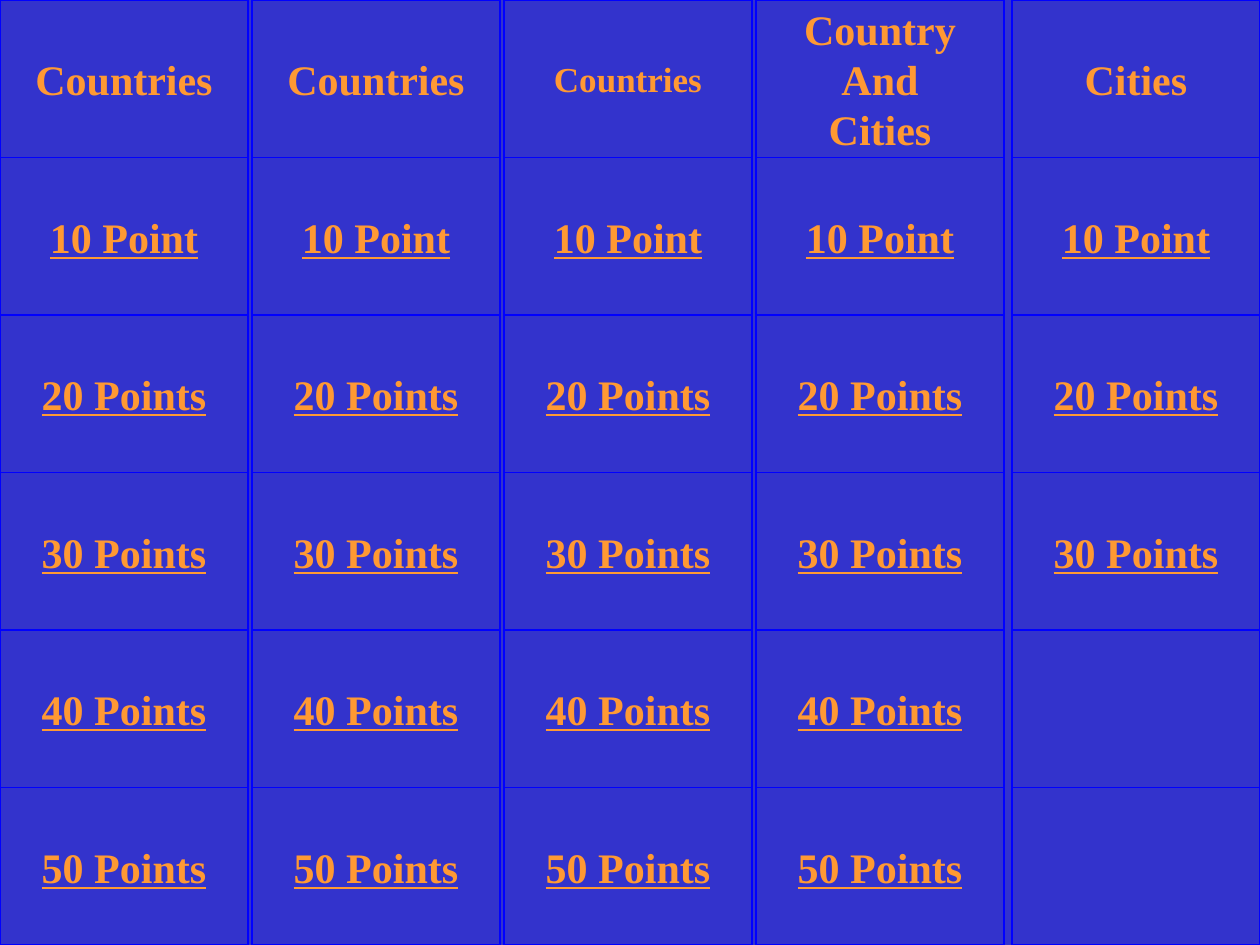
from pptx import Presentation
from pptx import util as u
from pptx.dml.color import RGBColor
from pptx.enum import shapes, text

# Content: category title, title size, number of point buttons with text
CATEGORIES = [
    ("Countries", 24, 5),
    ("Countries", 24, 5),
    ("Countries", 20, 5),
    ("Country\nAnd\nCities", 24, 5),
    ("Cities", 24, 3),
]
POINTS = ["10 Point", "20 Points", "30 Points", "40 Points", "50 Points"]

BLUE, LINE_BLUE, ORANGE = "3333CC", "0000FF", "FF9933"
FONT, POINT_SIZE = "Times New Roman", 24

# Board geometry in centimetres
SLIDE_WIDTH, SLIDE_HEIGHT = 25.4, 19.05
COLUMN_STEP = SLIDE_WIDTH / len(CATEGORIES)
BUTTON_WIDTH = 5.0
BUTTON_HEIGHT = SLIDE_HEIGHT / (len(POINTS) + 1)


def color(value):
    return RGBColor.from_string(value)


def add_button(slide, column, row, label, size, underline):
    # The last column sits flush with the right edge
    last = column == len(CATEGORIES) - 1
    left = SLIDE_WIDTH - BUTTON_WIDTH if last else column * COLUMN_STEP
    shape = slide.shapes.add_shape(
        shapes.MSO_SHAPE.ACTION_BUTTON_CUSTOM,
        u.Cm(left), u.Cm(row * BUTTON_HEIGHT),
        u.Cm(BUTTON_WIDTH), u.Cm(BUTTON_HEIGHT))
    shape.shadow.inherit = False
    shape.fill.solid()
    shape.fill.fore_color.rgb = color(BLUE)
    shape.line.color.rgb = color(LINE_BLUE)
    shape.line.width = u.Pt(0.75)

    frame = shape.text_frame
    frame.text = label
    frame.word_wrap = False
    frame.vertical_anchor = text.MSO_ANCHOR.MIDDLE
    for paragraph in frame.paragraphs:
        paragraph.alignment = text.PP_ALIGN.CENTER
        for run in paragraph.runs:
            run.font.name = FONT
            run.font.size = u.Pt(size)
            run.font.bold = True
            run.font.underline = underline
            run.font.color.rgb = color(ORANGE)


def main():
    presentation = Presentation()
    presentation.slide_width = u.Cm(SLIDE_WIDTH)
    presentation.slide_height = u.Cm(SLIDE_HEIGHT)
    slide = presentation.slides.add_slide(presentation.slide_layouts[6])
    slide.background.fill.solid()
    slide.background.fill.fore_color.rgb = color(BLUE)

    # One column per category: title on top, point buttons below
    for column, (title, title_size, filled) in enumerate(CATEGORIES):
        add_button(slide, column, 0, title, title_size, None)
        for row, points in enumerate(POINTS, start=1):
            label = points if row <= filled else ""
            add_button(slide, column, row, label, POINT_SIZE, True)

    presentation.save("out.pptx")


if __name__ == "__main__":
    main()
